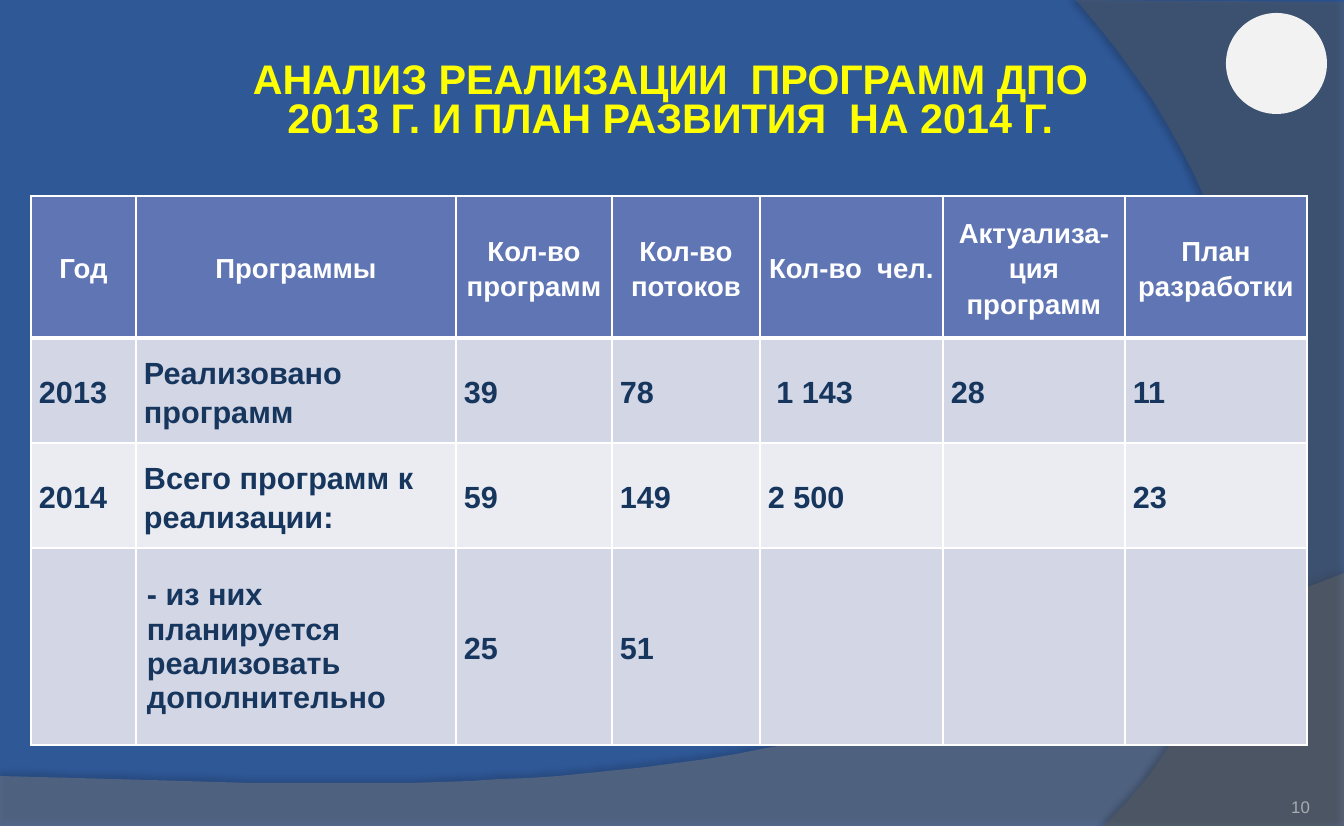
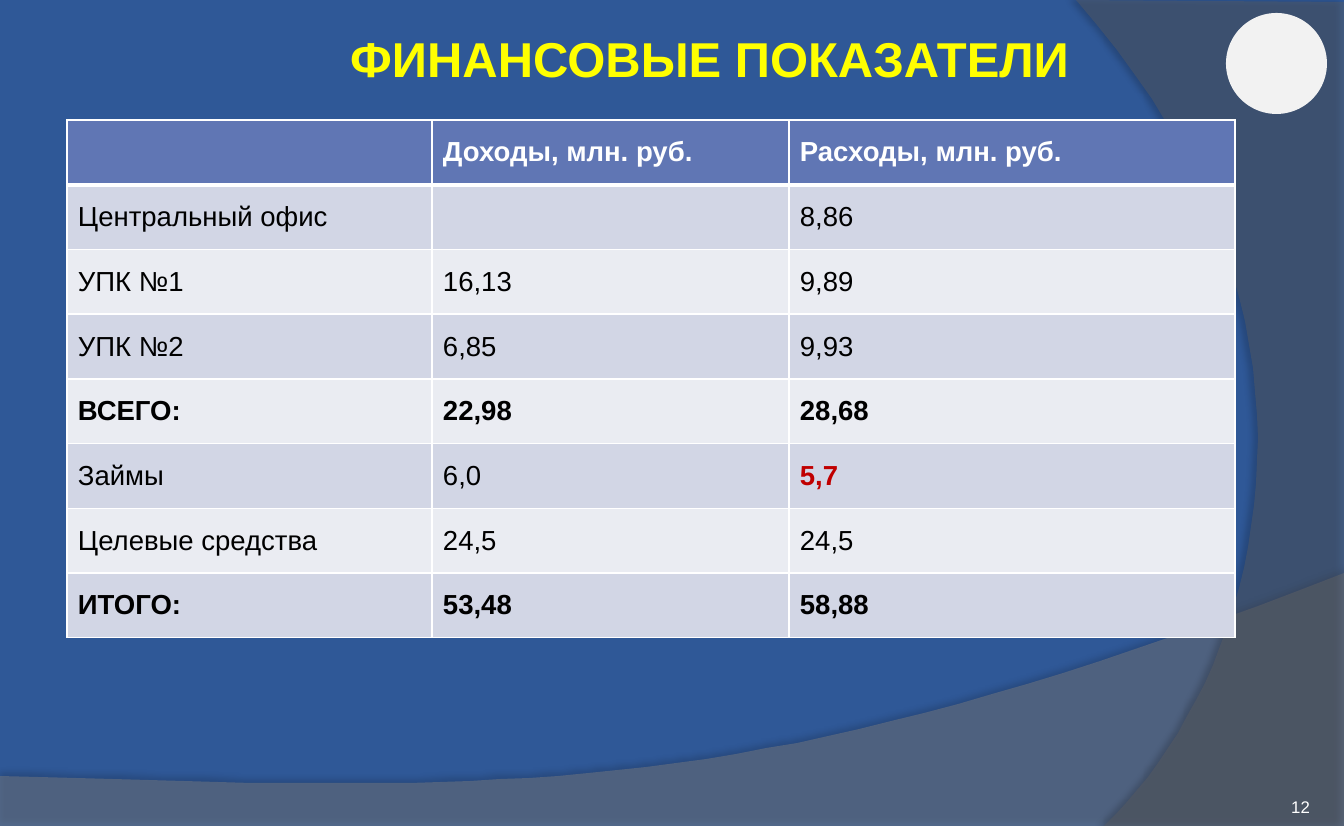
from lxml import etree
from pptx import Presentation
from pptx import util as u
from pptx.dml import color
from pptx.enum import shapes, text
from pptx.oxml import ns

SCALE = 8305
LEFT, CENTER, RIGHT = text.PP_ALIGN.LEFT, text.PP_ALIGN.CENTER, text.PP_ALIGN.RIGHT
MIDDLE, BOTTOM = text.MSO_ANCHOR.MIDDLE, text.MSO_ANCHOR.BOTTOM


def emu(px):
    return u.Emu(int(px * SCALE))


def rgb(value):
    return color.RGBColor.from_string(value)


def add_xml(parent, tag, **attributes):
    return etree.SubElement(
        parent, ns.qn(tag), {key: str(value) for key, value in attributes.items()}
    )


def write(frame, words, size=18, colour="000000", bold=False, align=LEFT, spacing=1.0):
    para = frame.paragraphs[0]
    para.alignment = align
    para.line_spacing = spacing
    for number, line in enumerate(words.split("\n")):
        if number:
            para.add_line_break()
        span = para.add_run()
        span.text = line
        span.font.name = "Arial"
        span.font.size = u.Pt(size)
        span.font.bold = bold
        span.font.color.rgb = rgb(colour)


def pad(holder, side=0, top=0, anchor=MIDDLE):
    holder.margin_left = holder.margin_right = emu(side)
    holder.margin_top = holder.margin_bottom = emu(top)
    holder.vertical_anchor = anchor


def curve(start, first, second, end, steps=40):
    points = []
    for step in range(steps + 1):
        t = step / steps
        weights = ((1 - t) ** 3, 3 * t * (1 - t) ** 2, 3 * t * t * (1 - t), t ** 3)
        points.append(tuple(
            sum(weight * point[axis] for weight, point in zip(weights, (start, first, second, end)))
            for axis in (0, 1)
        ))
    return points


class Builder:
    width, height = 1344, 826
    background = "2F5897"
    title_colour = "FFFF00"
    header_fill = "6076B4"
    bands = ("D2D6E5", "EAECF2")
    white = "FFFFFF"

    def __init__(self):
        self.deck = Presentation()
        self.deck.slide_width = emu(self.width)
        self.deck.slide_height = emu(self.height)
        fill = self.deck.slide_master.background.fill
        fill.solid()
        fill.fore_color.rgb = rgb(self.background)
        self.layout = self.deck.slide_layouts[5]
        for holder in list(self.layout.placeholders):
            if holder.placeholder_format.idx:
                self.layout.shapes.element.remove(holder.element)
        self.page = None

    def start(self):
        self.page = self.deck.slides.add_slide(self.layout)

    def share(self, decorations):
        for place, shape in enumerate(decorations, 2):
            self.layout.shapes.element.insert(place, shape.element)

    def paint(self, shape, colour):
        shape.fill.solid()
        shape.fill.fore_color.rgb = rgb(colour)
        shape.line.fill.background()
        shape.shadow.inherit = False

    def wave(self, points, colour, opacity, shadow_opacity, distance, direction):
        outline = self.page.shapes.build_freeform(*points[0], scale=SCALE)
        outline.add_line_segments(points[1:], close=True)
        shape = outline.convert_to_shape()
        self.paint(shape, colour)
        properties = shape.element.spPr
        add_xml(properties.find(".//" + ns.qn("a:srgbClr")), "a:alpha", val=opacity * 1000)
        shadow = add_xml(
            properties.find(ns.qn("a:effectLst")), "a:outerShdw", blurRad=u.Pt(4),
            dist=u.Pt(distance), dir=direction * 60000, algn="ctr", rotWithShape=0,
        )
        tint = add_xml(shadow, "a:srgbClr", val="000000")
        add_xml(tint, "a:alpha", val=shadow_opacity * 1000)
        return shape

    def disc(self, left, top, size, colour):
        shape = self.page.shapes.add_shape(
            shapes.MSO_SHAPE.OVAL, emu(left), emu(top), emu(size), emu(size)
        )
        self.paint(shape, colour)
        return shape

    def title(self, words, left, top, width, height, size):
        holder = self.page.shapes.title
        holder.left, holder.top = emu(left), emu(top)
        holder.width, holder.height = emu(width), emu(height)
        frame = holder.text_frame
        frame.auto_size = text.MSO_AUTO_SIZE.NONE
        frame.word_wrap = True
        pad(frame)
        write(frame, words, size=size, colour=self.title_colour, bold=True,
              align=CENTER, spacing=0.8)

    def number(self, words, colour):
        box = self.page.shapes.add_textbox(emu(1198), emu(773), emu(112), emu(44))
        box.text_frame.word_wrap = True
        pad(box.text_frame, anchor=BOTTOM)
        write(box.text_frame, words, size=11, colour=colour, align=RIGHT)

    def borders(self, cell, row):
        properties = cell._tc.get_or_add_tcPr()
        weights = {"L": 1, "R": 1, "T": 3 if row == 1 else 1, "B": 1 if row else 3}
        for side, weight in weights.items():
            line = add_xml(properties, "a:ln" + side, w=u.Pt(weight))
            add_xml(add_xml(line, "a:solidFill"), "a:srgbClr", val=self.white)

    def table(self, left, top, columns, heights, rows, style, padding):
        grid = self.page.shapes.add_table(
            len(rows), len(columns), emu(left), emu(top), emu(sum(columns)), emu(sum(heights))
        ).table
        grid.horz_banding = False
        for column, width in zip(grid.columns, columns):
            column.width = emu(width)
        for r, (row, height) in enumerate(zip(rows, heights)):
            grid.rows[r].height = emu(height)
            for c, words in enumerate(row):
                cell = grid.cell(r, c)
                self.borders(cell, r)
                cell.fill.solid()
                cell.fill.fore_color.rgb = rgb(self.bands[(r - 1) % 2] if r else self.header_fill)
                look = style(r, c, row)
                pad(cell, *look.pop("padding", padding))
                if words:
                    write(cell.text_frame, words, **look)


def program_style(r, c, row):
    if r == 0:
        return {"colour": Builder.white, "bold": True, "align": CENTER, "spacing": 1.15}
    look = {"size": 20, "colour": "17365D", "bold": True, "spacing": 1.15}
    if row[c].startswith("-"):
        look.update(spacing=1.0, padding=(11, 6))
    return look


def finance_style(r, c, row):
    if r == 0:
        return {"colour": Builder.white, "bold": True}
    if row[c] == "5,7":
        return {"colour": "C00000", "bold": True}
    return {"bold": row[0].endswith(":")}


def main():
    builder = Builder()
    builder.start()
    builder.share([
        builder.wave(
            [(0, 826), (1344, 826)] + curve((1344, 573), (751, 803), (525, 792), (0, 776)),
            "7F7F7F", 45, 35, 3.5, 270),
        builder.wave(
            [(1344, 2), (1344, 826)] + curve((1104, 826), (1256, 682), (1367, 330), (1076, 0)),
            "5E5E5E", 40, 45, 4, 180),
        builder.disc(1226, 13, 101, "F2F2F2"),
    ])
    builder.title("АНАЛИЗ РЕАЛИЗАЦИИ  ПРОГРАММ ДПО\n2013 Г. И ПЛАН РАЗВИТИЯ  НА 2014 Г.",
                  67, 33, 1207, 138, 27)
    builder.table(
        31, 196, [105, 320, 156, 148, 183, 182, 182], [142, 105, 105, 197],
        [
            ("Год", "Программы", "Кол-во программ", "Кол-во потоков", "Кол-во  чел.",
             "Актуализа-ция программ", "План разработки"),
            ("2013", "Реализовано программ", "39", "78", " 1 143", "28", "11"),
            ("2014", "Всего программ к реализации:", "59", "149", "2 500", "", "23"),
            ("", "- из них планируется реализовать дополнительно", "25", "51", "", "", ""),
        ],
        program_style, (8, 0))
    builder.number("10", "A9ACB1")

    builder.start()
    builder.title("ФИНАНСОВЫЕ ПОКАЗАТЕЛИ", 161, 40, 1098, 47, 32)
    builder.table(
        67, 120, [365, 357, 446], [518 / 8] * 8,
        [
            ("", "Доходы, млн. руб.", "Расходы, млн. руб."),
            ("Центральный офис", "", "8,86"),
            ("УПК №1", "16,13", "9,89"),
            ("УПК №2", "6,85", "9,93"),
            ("ВСЕГО:", "22,98", "28,68"),
            ("Займы", "6,0", "5,7"),
            ("Целевые средства", "24,5", "24,5"),
            ("ИТОГО:", "53,48", "58,88"),
        ],
        finance_style, (11, 6))
    builder.number("12", Builder.white)
    builder.deck.save("out.pptx")


if __name__ == "__main__":
    main()
